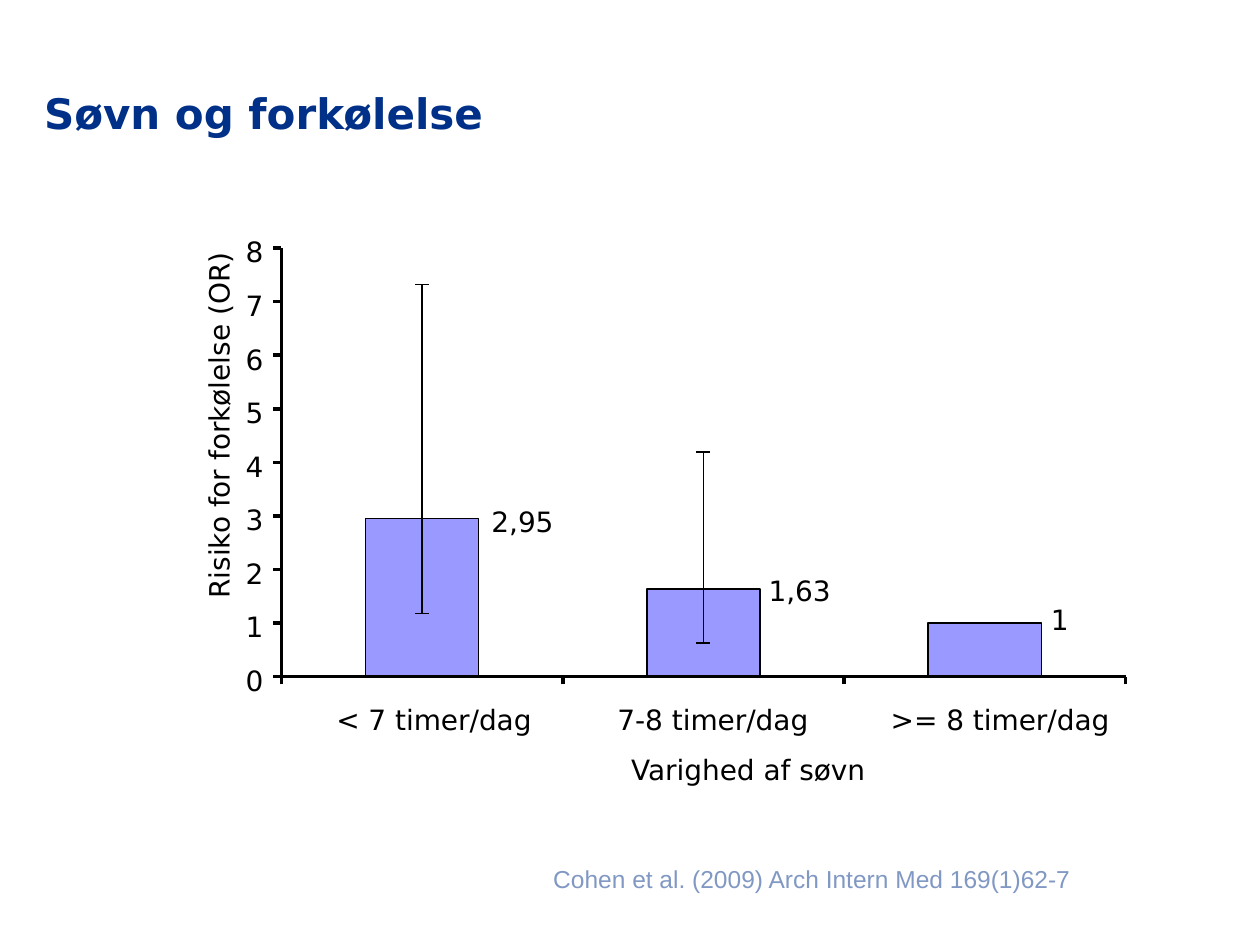
from dataclasses import dataclass

from lxml import etree
from pptx import Presentation
from pptx.dml.color import RGBColor
from pptx.enum.shapes import MSO_CONNECTOR, MSO_SHAPE
from pptx.enum.text import MSO_AUTO_SIZE
from pptx.oxml.ns import qn
from pptx.util import Pt

STRAIGHT = MSO_CONNECTOR.STRAIGHT
RECTANGLE = MSO_SHAPE.RECTANGLE
FIT_TEXT = MSO_AUTO_SIZE.SHAPE_TO_FIT_TEXT
TOP_SITE = 0


@dataclass(frozen=True)
class Theme:
    ink: RGBColor = RGBColor(0x00, 0x00, 0x00)
    title: RGBColor = RGBColor(0x00, 0x30, 0x87)
    source: RGBColor = RGBColor(0x80, 0x98, 0xC3)
    bar: RGBColor = RGBColor(0x99, 0x99, 0xFF)
    font: str = "DejaVu Sans"
    source_font: str = "Arial"
    title_size: int = 24
    label_size: int = 16
    source_size: int = 14
    outline: float = 0.88
    hairline: float = 0


theme = Theme()
prs = Presentation()
prs.slide_width, prs.slide_height = Pt(720), Pt(540)
slide = prs.slides.add_slide(prs.slide_layouts[6])


def add_text(text, left, top, width, height=18.7, size=theme.label_size,
             color=theme.ink, font=theme.font, bold=False, after=3):
    box = slide.shapes.add_textbox(Pt(left), Pt(top), Pt(width), Pt(height))
    frame = box.text_frame
    frame.margin_left = frame.margin_right = 0
    frame.margin_top = frame.margin_bottom = 0
    frame.word_wrap = False
    frame.auto_size = FIT_TEXT
    paragraph = frame.paragraphs[0]
    paragraph.text = text
    paragraph.line_spacing = 1.04
    paragraph.space_after = Pt(after)
    paragraph.font.name = font
    paragraph.font.size = Pt(size)
    paragraph.font.bold = bold
    paragraph.font.color.rgb = color
    return box


def add_line(x1, y1, x2, y2, weight):
    line = slide.shapes.add_connector(STRAIGHT, Pt(x1), Pt(y1), Pt(x2), Pt(y2))
    line.line.color.rgb = theme.ink
    line.line.width = Pt(weight)
    etree.SubElement(line._element.spPr, qn("a:effectLst"))
    return line


# Title and source
add_text("Søvn og forkølelse", 25.2, 49, 669.6, 28, size=theme.title_size,
         color=theme.title, bold=True, after=0)
add_text("Cohen et al. (2009) Arch Intern Med 169(1)62-7", 316.1, 493.2, 296.6, 16.6,
         size=theme.source_size, color=theme.source, font=theme.source_font)

# Plot scale
axis_left, axis_right = 160.8, 643.2
axis_top, baseline = 141.8, 386.6
max_risk = 8
unit = (baseline - axis_top) / max_risk
bar_width, cap_width, tick = 64.8, 8, 4.5

# Category, its left and width; risk, its label, label left, top and width; interval
groups = [
    ("< 7 timer/dag", 192.2, 115.2, 2.95, "2,95", 280.8, 287.3, 36.7, (7.32, 1.18)),
    ("7-8 timer/dag", 352.8, 113.8, 1.63, "1,63", 439.2, 326.9, 36.7, (4.19, 0.63)),
    (">= 8 timer/dag", 509, 128.2, 1, "1", 600.5, 343.4, 10.1, ()),
]
step = (axis_right - axis_left) / len(groups)

# Bars with error bars and labels
for i, (category, category_left, category_width, risk, risk_label,
        risk_left, risk_top, risk_width, interval) in enumerate(groups):
    center = axis_left + (i + 0.5) * step
    bar_top = baseline - risk * unit
    bar = slide.shapes.add_shape(RECTANGLE, Pt(center - bar_width / 2), Pt(bar_top),
                                 Pt(bar_width), Pt(risk * unit))
    bar.shadow.inherit = False
    bar.fill.solid()
    bar.fill.fore_color.rgb = theme.bar
    bar.line.color.rgb = theme.ink
    bar.line.width = Pt(theme.outline)
    for limit in interval:
        limit_y = baseline - limit * unit
        whisker = add_line(center, bar_top, center, limit_y, theme.outline)
        whisker.begin_connect(bar, TOP_SITE)
        add_line(center - cap_width / 2, limit_y, center + cap_width / 2, limit_y,
                 theme.outline)
    add_text(risk_label, risk_left, risk_top, risk_width)
    add_text(category, category_left, 401, category_width)

# Value axis
add_line(axis_left, axis_top, axis_left, baseline, theme.hairline)
for value in range(max_risk + 1):
    y = baseline - value * unit
    add_line(axis_left - tick, y, axis_left, y, theme.hairline)
    add_text(str(value), 140.4, y - 8.3, 10.1)

# Category axis
add_line(axis_left, baseline, axis_right, baseline, theme.hairline)
for i in range(len(groups) + 1):
    x = axis_left + i * step
    add_line(x, baseline + tick, x, baseline, theme.hairline)

# Axis titles
add_text("Varighed af søvn", 360.7, 429.1, 136.1)
risk_title = add_text("Risiko for forkølelse (OR)", 21.6, 230.4, 204.5)
risk_title.rotation = 270

prs.save("out.pptx")
